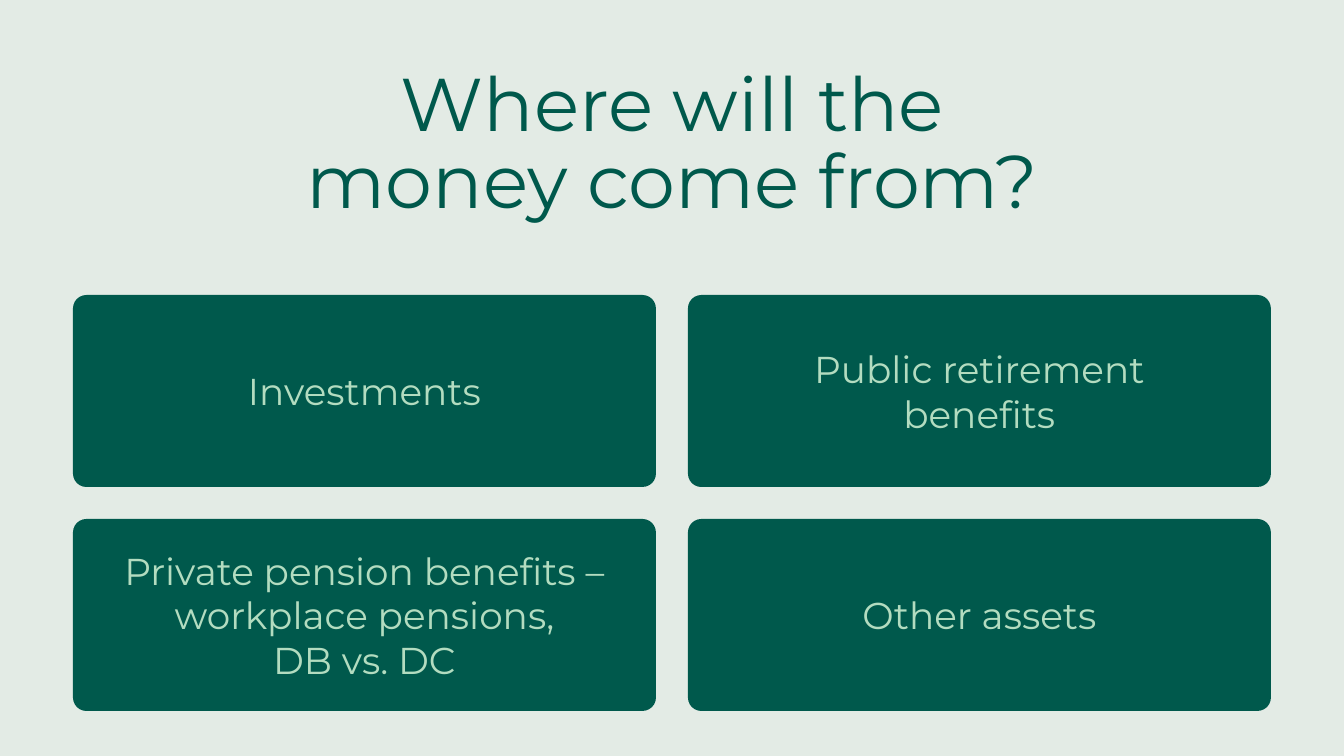
from pptx import Presentation
from pptx.dml.color import RGBColor
from pptx.enum.shapes import MSO_SHAPE
from pptx.enum.text import MSO_ANCHOR, PP_ALIGN
from pptx.util import Emu, Pt

FONT = "Montserrat"
PALE, GREEN, MINT = "E3EBE5", "00594C", "B3DCC0"
SLIDE_WIDTH, SLIDE_HEIGHT = 1344, 756
CARDS = [
    [["Investments"], ["Public retirement", "benefits"]],
    [["Private pension benefits – workplace pensions,", "DB vs. DC"],
     ["Other assets"]],
]


def px(length):
    return Emu(round(length * 914400 / 134.4))


def color(hex_string):
    return RGBColor.from_string(hex_string)


def write_lines(shape, lines, size, text_color, anchor, line_spacing=1.0):
    """Write one centred paragraph, with a line break between lines."""
    frame = shape.text_frame
    frame.word_wrap = True
    frame.vertical_anchor = anchor
    frame.margin_left = frame.margin_right = px(13)
    frame.margin_top = frame.margin_bottom = px(13)
    paragraph = frame.paragraphs[0]
    paragraph.alignment = PP_ALIGN.CENTER
    paragraph.line_spacing = line_spacing
    for index, line in enumerate(lines):
        if index:
            paragraph.add_line_break()
        run = paragraph.add_run()
        run.text = line
        run.font.name = FONT
        run.font.size = Pt(size)
        run.font.color.rgb = color(text_color)


def add_title(slide, left, top, width, height):
    shape = slide.shapes.add_textbox(px(left), px(top), px(width), px(height))
    write_lines(shape, ["Where will the", "money come from?"], 40, GREEN,
                MSO_ANCHOR.TOP, 0.85)


def add_card(slide, left, top, width, height, lines):
    shape = slide.shapes.add_shape(MSO_SHAPE.ROUNDED_RECTANGLE,
                                   px(left), px(top), px(width), px(height))
    shape.adjustments[0] = 0.07
    shape.shadow.inherit = False
    shape.fill.solid()
    shape.fill.fore_color.rgb = color(GREEN)
    shape.line.fill.background()
    write_lines(shape, lines, 20, MINT, MSO_ANCHOR.MIDDLE)


def add_card_grid(slide, left, top, width, height, gap=32):
    card_width = (width - gap * (len(CARDS[0]) - 1)) / len(CARDS[0])
    card_height = (height - gap * (len(CARDS) - 1)) / len(CARDS)
    for row, cards in enumerate(CARDS):
        for column, lines in enumerate(cards):
            add_card(slide, left + column * (card_width + gap),
                     top + row * (card_height + gap),
                     card_width, card_height, lines)


def main():
    presentation = Presentation()
    presentation.slide_width = px(SLIDE_WIDTH)
    presentation.slide_height = px(SLIDE_HEIGHT)
    slide = presentation.slides.add_slide(presentation.slide_layouts[6])

    # Background
    slide.background.fill.solid()
    slide.background.fill.fore_color.rgb = color(PALE)

    # Title above the grid of income sources
    add_title(slide, 245, 58, 855, 206)
    add_card_grid(slide, 73, 295, 1198, 416)

    presentation.save("out.pptx")


if __name__ == "__main__":
    main()
